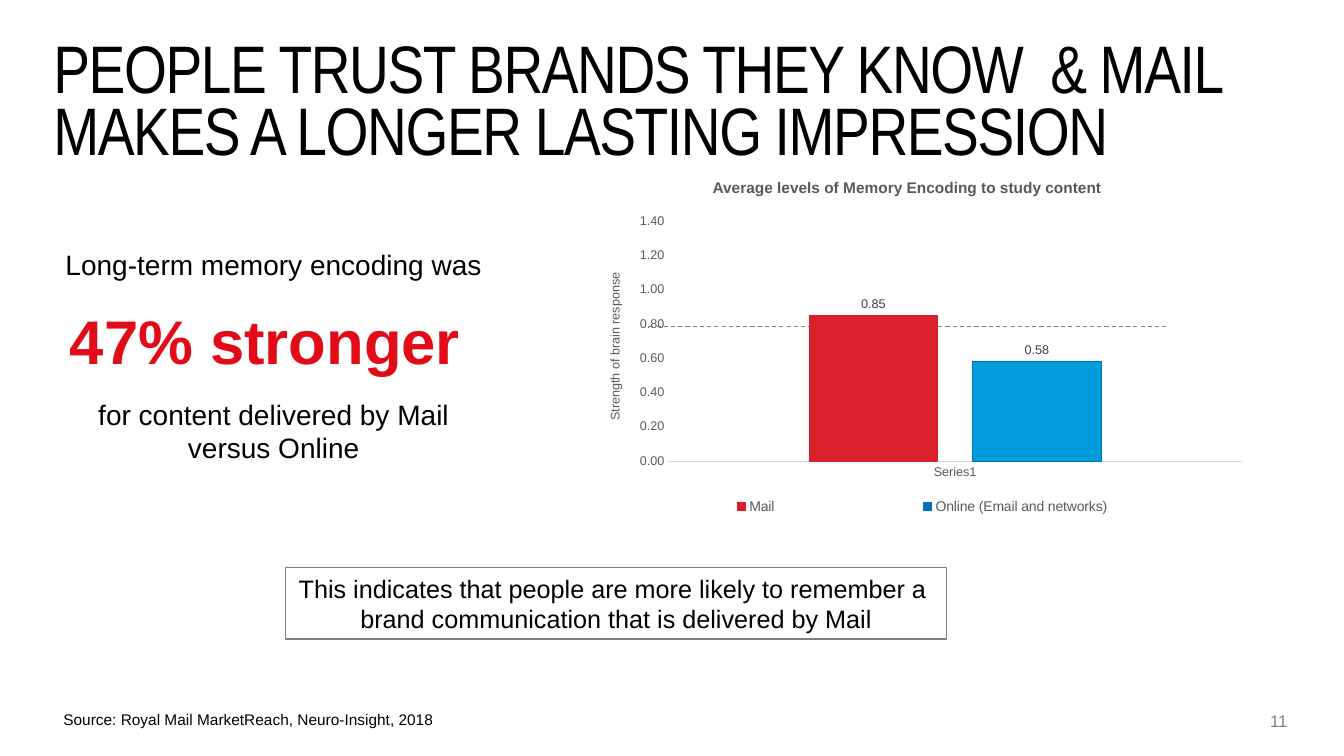
from dataclasses import dataclass

from lxml import etree
from pptx import Presentation
from pptx.chart.data import CategoryChartData
from pptx.dml.color import RGBColor
from pptx.enum.chart import XL_CHART_TYPE, XL_LABEL_POSITION, XL_LEGEND_POSITION, XL_TICK_MARK
from pptx.enum.dml import MSO_LINE
from pptx.enum.shapes import MSO_CONNECTOR, MSO_SHAPE
from pptx.enum.text import MSO_ANCHOR, PP_ALIGN
from pptx.oxml.ns import qn
from pptx.util import Pt

LEFT, CENTER, RIGHT = PP_ALIGN.LEFT, PP_ALIGN.CENTER, PP_ALIGN.RIGHT
NO_TICK = XL_TICK_MARK.NONE
PX = 9144  # EMU per px, 100 px to the inch
FONT, TITLE_FONT = "Arial", "Arial Narrow"
COLORS = {
    "black": "000000", "page": "808080", "accent": "E20C18", "text": "595959",
    "label": "404040", "line": "7F7F7F", "axis": "D9D9D9",
    "mail": "DA202A", "online": "009CDA", "online_edge": "0070C0",
}


@dataclass
class Para:
    text: str
    size: int
    color: str = "black"
    bold: bool = False
    align: PP_ALIGN = LEFT
    after: int = 0
    font: str = FONT
    line_pt: int = 0
    spacing: int = 0


@dataclass
class Box:
    x: int
    y: int
    w: int
    h: int
    paras: list[Para]
    inset: bool = True
    wrap: bool = True


@dataclass
class Bar:
    name: str
    value: float
    fill: str
    edge: str


def rgb(name: str) -> RGBColor:
    return RGBColor.from_string(COLORS[name])


def style_font(font, size: int, color: str, bold: bool = False, name: str = FONT) -> None:
    font.size, font.bold, font.name = Pt(size), bold, name
    font.color.rgb = rgb(color)


def fill_text(tf, box: Box) -> None:
    tf.word_wrap = box.wrap
    if not box.inset:
        tf.margin_left = tf.margin_right = tf.margin_top = tf.margin_bottom = 0
    for i, para in enumerate(box.paras):
        p = tf.add_paragraph() if i else tf.paragraphs[0]
        p.alignment = para.align
        p.space_after = Pt(para.after)
        if para.line_pt:
            p.line_spacing = Pt(para.line_pt)
        for j, line in enumerate(para.text.split("\n")):
            if j:
                p.add_line_break()
            r = p.add_run()
            r.text = line
            style_font(r.font, para.size, para.color, para.bold, para.font)
            if para.spacing:
                r.font._element.set("spc", str(para.spacing))


def add_text(s, box: Box) -> None:
    sp = s.shapes.add_textbox(box.x * PX, box.y * PX, box.w * PX, box.h * PX)
    fill_text(sp.text_frame, box)


def add_callout(s, box: Box) -> None:
    sp = s.shapes.add_shape(MSO_SHAPE.RECTANGLE, box.x * PX, box.y * PX, box.w * PX, box.h * PX)
    sp.shadow.inherit = False
    sp.fill.background()
    sp.line.color.rgb = rgb("line")
    sp.line.width = Pt(0.75)
    sp.text_frame.vertical_anchor = MSO_ANCHOR.MIDDLE
    fill_text(sp.text_frame, box)


def add_dashed_line(s, x1: int, x2: int, y: int) -> None:
    line = s.shapes.add_connector(MSO_CONNECTOR.STRAIGHT, x1 * PX, y * PX, x2 * PX, y * PX)
    line.line.color.rgb = rgb("line")
    line.line.width = Pt(0.75)
    line.line.dash_style = MSO_LINE.DASH
    etree.SubElement(line._element.spPr, qn("a:effectLst"))


def set_layout(parent, after: str, x: float, y: float, w: float, h: float, inner: bool) -> None:
    """Place a chart part by fractions of the chart area."""
    for old in parent.findall(qn("c:layout")):
        parent.remove(old)
    layout = etree.Element(qn("c:layout"))
    manual = etree.SubElement(layout, qn("c:manualLayout"))
    values = [("layoutTarget", "inner")] if inner else []
    values += [("xMode", "edge"), ("yMode", "edge"), ("x", x), ("y", y), ("w", w), ("h", h)]
    for tag, value in values:
        etree.SubElement(manual, qn(f"c:{tag}")).set("val", str(value))
    if after:
        parent.find(qn(after)).addnext(layout)
    else:
        parent.insert(0, layout)


def add_bar_chart(s, x: int, y: int, w: int, h: int, bars: list[Bar]) -> None:
    data = CategoryChartData(number_format="0.00")
    data.categories = ["Series1"]
    for bar in bars:
        data.add_series(bar.name, [bar.value])
    chart = s.shapes.add_chart(XL_CHART_TYPE.COLUMN_CLUSTERED, x * PX, y * PX, w * PX, h * PX, data).chart
    chart.has_title = False
    style_font(chart.font, 9, "black")

    # Axes
    cat, val = chart.category_axis, chart.value_axis
    for axis in (cat, val):
        axis.major_tick_mark = axis.minor_tick_mark = NO_TICK
        axis.has_major_gridlines = False
        style_font(axis.tick_labels.font, 9, "text")
    cat.format.line.color.rgb = rgb("axis")
    cat.format.line.width = Pt(0.75)
    val.format.line.fill.background()
    val.minimum_scale, val.maximum_scale, val.major_unit = 0, 1.4, 0.2
    val.tick_labels.number_format = "0.00"
    val.tick_labels.number_format_is_linked = False
    r = val.axis_title.text_frame.paragraphs[0].add_run()
    r.text = "Strength of brain response"
    style_font(r.font, 9, "text")

    # Bars and their labels
    plot = chart.plots[0]
    plot.gap_width, plot.overlap, plot.vary_by_categories = 219, -27, False
    for series, bar in zip(plot.series, bars):
        series.format.fill.solid()
        series.format.fill.fore_color.rgb = rgb(bar.edge)
        point = series.points[0].format
        point.fill.solid()
        point.fill.fore_color.rgb = rgb(bar.fill)
        for fmt in (series.format, point):
            fmt.line.color.rgb = rgb(bar.edge)
            fmt.line.width = Pt(0.75)
        labels = series.data_labels
        labels.show_value = True
        labels.position = XL_LABEL_POSITION.OUTSIDE_END
        style_font(labels.font, 9, "label")

    # Legend and plot area
    chart.has_legend = True
    chart.legend.position = XL_LEGEND_POSITION.BOTTOM
    chart.legend.include_in_layout = False
    style_font(chart.legend.font, 10, "text")
    set_layout(chart.legend._element, "c:legendPos", 0, 0.92, 1, 0.08, False)
    plot_area = chart._chartSpace.find(f".//{qn('c:plotArea')}")
    set_layout(plot_area, "", 0.114, 0.027, 0.866, 0.784, True)


TITLE = Para("PEOPLE TRUST BRANDS THEY KNOW  & MAIL MAKES A LONGER LASTING IMPRESSION",
             48, font=TITLE_FONT, line_pt=44, spacing=-100)
TEXTS = [
    Box(53, 45, 1220, 52, [TITLE], inset=False),
    Box(1230, 705, 47, 20, [Para("11", 12, "page", align=RIGHT)], inset=False),
    Box(53, 241, 437, 244, [
        Para("Long-term memory encoding was ", 20, align=CENTER, after=15),
        Para("47% stronger ", 44, "accent", True, CENTER, 15),
        Para("for content delivered by Mail versus Online", 20, align=CENTER, after=15),
    ]),
    Box(611, 172, 582, 29, [
        Para("Average levels of Memory Encoding to study content ", 11, "text", True, CENTER)]),
    Box(53, 700, 389, 29, [Para("Source: Royal Mail MarketReach, Neuro-Insight, 2018", 11)], wrap=False),
]
CALLOUT = Box(283, 563, 656, 71, [
    Para("This indicates that people are more likely to remember a \n"
         "brand communication that is delivered by Mail", 18, align=CENTER)], wrap=False)
BARS = [
    Bar("Mail", 0.85, "mail", "mail"),
    Bar("Online (Email and networks) ", 0.58, "online", "online_edge"),
]


def main() -> None:
    prs = Presentation()
    prs.slide_width, prs.slide_height = 1333 * PX, 750 * PX
    s = prs.slides.add_slide(prs.slide_layouts[6])
    for box in TEXTS:
        add_text(s, box)
    add_dashed_line(s, 644, 1159, 324)
    add_bar_chart(s, 588, 211, 657, 304, BARS)
    add_callout(s, CALLOUT)
    prs.save("out.pptx")


if __name__ == "__main__":
    main()
